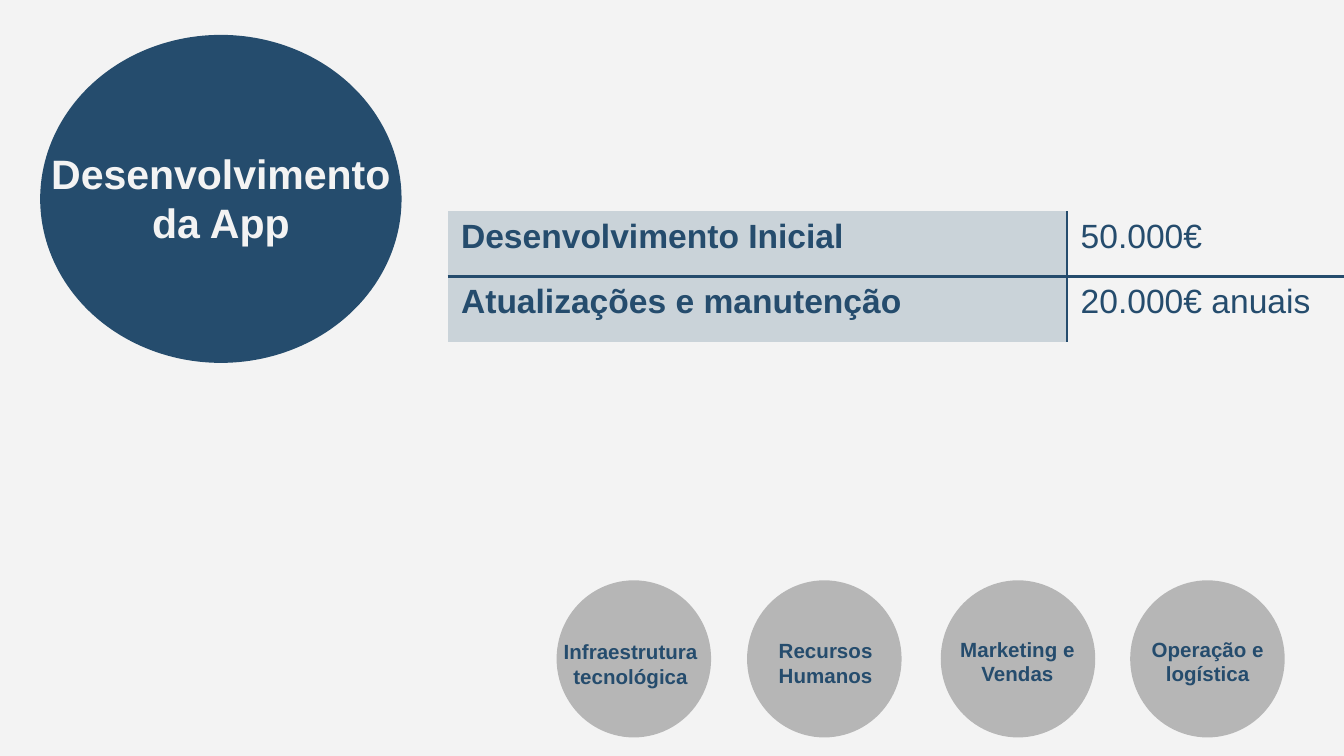
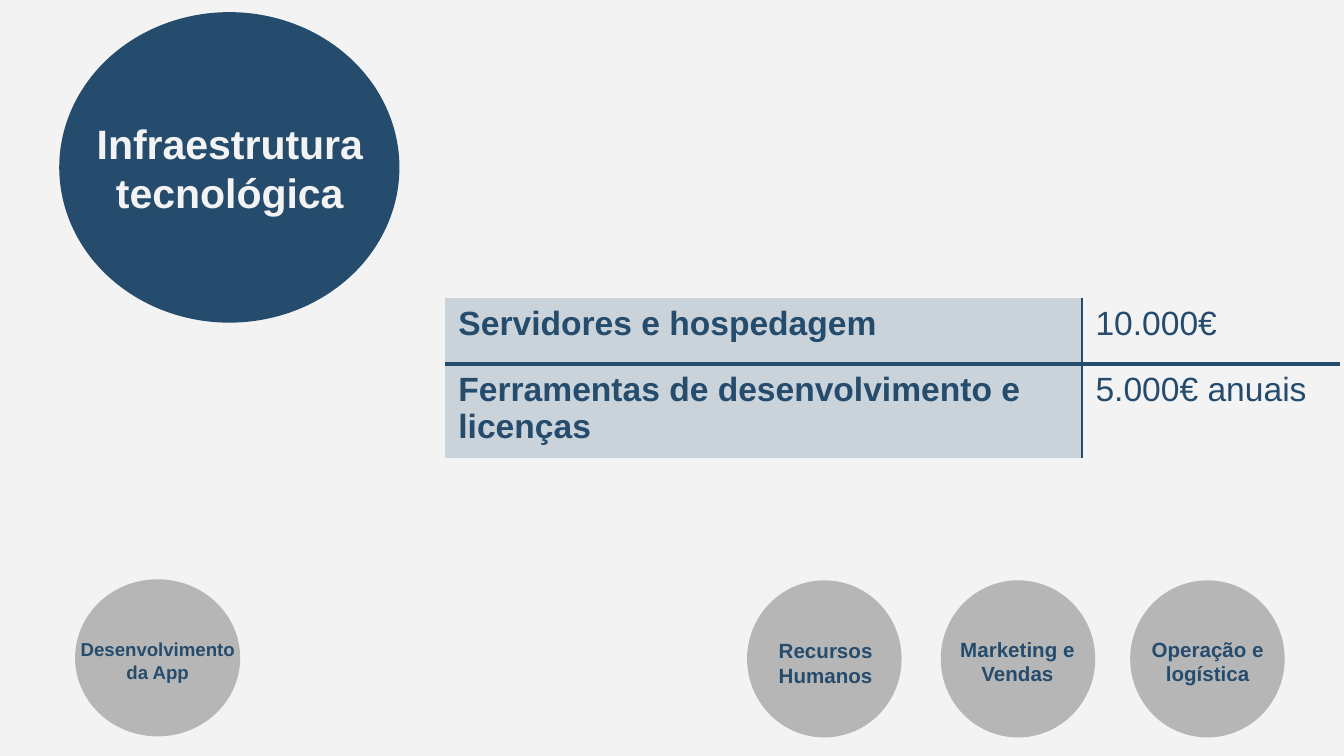
from dataclasses import dataclass

from lxml import etree
from pptx import Presentation
from pptx.dml.color import RGBColor
from pptx.enum.shapes import MSO_SHAPE
from pptx.enum.text import MSO_ANCHOR, MSO_AUTO_SIZE, PP_ALIGN
from pptx.oxml.ns import qn
from pptx.util import Cm, Pt

OVAL = MSO_SHAPE.OVAL
TOP = MSO_ANCHOR.TOP
FIT = MSO_AUTO_SIZE.SHAPE_TO_FIT_TEXT
LEFT, MID = PP_ALIGN.LEFT, PP_ALIGN.CENTER

TONES = {"navy": "254C6D", "paper": "F3F3F3", "grey": "B6B6B6", "mist": "CAD3D9"}
FONT = "Arial"
PLAIN_STYLE = "{2D5ABB26-0587-4C30-8999-92F81FD0307C}"
ROW = 1.24

Box = tuple[float, float, float, float]


@dataclass(frozen=True)
class Spot:
    """A topic circle and the box of its label, in centimetres."""
    text: str
    disc: Box
    label: Box
    size: int = 11


@dataclass(frozen=True)
class Costs:
    left: float
    top: float
    cols: tuple[float, float]
    rows: tuple[tuple[str, str], ...]


@dataclass(frozen=True)
class Page:
    head: Spot
    costs: Costs
    links: tuple[Spot, ...]


def link(text: str, left: float, label: Box) -> Spot:
    return Spot(text, (left, 10.97, 2.92, 2.97), label)


STAFF = link("Recursos Humanos", 14.12, (14.22, 11.94, 2.77, 1.19))
SALES = link("Marketing e Vendas", 17.78, (17.58, 11.91, 3.3, 1.19))
FREIGHT = link("Operação e logística", 21.36, (21.21, 11.91, 3.23, 1.19))
REST = (STAFF, SALES, FREIGHT)
APP = "Desenvolvimento da App"
TECH = "Infraestrutura tecnológica"

PAGES = (
    Page(
        Spot(APP, (0.76, 0.66, 6.83, 6.2), (0.38, 2.67, 7.59, 2.13), 22),
        Costs(8.46, 3.99, (11.71, 5.23), (
            ("Desenvolvimento Inicial", "50.000€"),
            ("Atualizações e manutenção", "20.000€ anuais"),
        )),
        (link(TECH, 10.52, (10.37, 11.96, 3.1, 1.19)), *REST),
    ),
    Page(
        Spot(TECH, (1.12, 0.23, 6.43, 5.87), (0.99, 2.11, 6.71, 2.13), 22),
        Costs(8.41, 5.64, (12.04, 4.88), (
            ("Servidores e hospedagem", "10.000€"),
            ("Ferramentas de desenvolvimento e licenças", "5.000€ anuais"),
        )),
        (Spot(APP, (1.42, 10.95, 3.12, 2.97), (1.24, 11.94, 3.48, 1.12), 10), *REST),
    ),
)


def tone(name: str) -> RGBColor:
    return RGBColor.from_string(TONES[name])


def paint(fill, name: str) -> None:
    fill.solid()
    fill.fore_color.rgb = tone(name)


def write(frame, text: str, *, size: int, color: str = "navy",
          bold: bool = True, align=MID) -> None:
    frame.word_wrap = True
    para = frame.paragraphs[0]
    para.alignment = align
    run = para.add_run()
    run.text = text
    font = run.font
    font.name, font.size, font.bold = FONT, Pt(size), bold
    font.color.rgb = tone(color)


def add_disc(shapes, box: Box, color: str) -> None:
    disc = shapes.add_shape(OVAL, *map(Cm, box))
    disc.shadow.inherit = False
    paint(disc.fill, color)
    disc.line.fill.background()


def add_head(slide, spot: Spot) -> None:
    add_disc(slide.shapes, spot.disc, "navy")
    title = slide.shapes.title
    title.left, title.top, title.width, title.height = map(Cm, spot.label)
    frame = title.text_frame
    frame.vertical_anchor = TOP
    frame.auto_size = FIT
    write(frame, spot.text, size=spot.size, color="paper")
    # The title must lie in front of its circle
    slide.shapes._spTree.append(title._element)


def add_link(slide, spot: Spot) -> None:
    shapes = slide.shapes.add_group_shape().shapes
    add_disc(shapes, spot.disc, "grey")
    frame = shapes.add_textbox(*map(Cm, spot.label)).text_frame
    frame.auto_size = FIT
    write(frame, spot.text, size=spot.size)


def rule(cell, sides: dict[str, float]) -> None:
    """Draw cell borders; sides come in the order L, R, T, B, before the fill."""
    props = cell._tc.get_or_add_tcPr()
    for at, (side, width) in enumerate(sides.items()):
        line = etree.Element(qn(f"a:ln{side}"), w=str(Pt(width)))
        fill = etree.SubElement(line, qn("a:solidFill"))
        etree.SubElement(fill, qn("a:srgbClr"), val=TONES["navy"])
        props.insert(at, line)


def add_costs(slide, costs: Costs) -> None:
    count = len(costs.rows)
    table = slide.shapes.add_table(
        count, 2, Cm(costs.left), Cm(costs.top),
        Cm(sum(costs.cols)), Cm(ROW * count)).table
    table.first_row = table.horz_banding = False
    table._tbl.tblPr.find(qn("a:tableStyleId")).text = PLAIN_STYLE
    for col, width in zip(table.columns, costs.cols):
        col.width = Cm(width)
    for r, texts in enumerate(costs.rows):
        table.rows[r].height = Cm(ROW)
        for c, text in enumerate(texts):
            cell = table.cell(r, c)
            name = c == 0
            write(cell.text_frame, text, size=18, bold=name, align=LEFT)
            paint(cell.fill, "mist" if name else "paper")
            sides = {"R" if name else "L": 1}
            if r > 0:
                sides["T"] = 2
            if r < count - 1:
                sides["B"] = 2
            rule(cell, sides)


def main() -> None:
    deck = Presentation()
    deck.slide_width, deck.slide_height = Cm(25.4), Cm(14.29)
    paint(deck.slide_master.background.fill, "paper")
    layout = deck.slide_layouts.get_by_name("Title Only")
    for page in PAGES:
        slide = deck.slides.add_slide(layout)
        add_head(slide, page.head)
        add_costs(slide, page.costs)
        for spot in page.links:
            add_link(slide, spot)
    deck.save("out.pptx")


if __name__ == "__main__":
    main()
